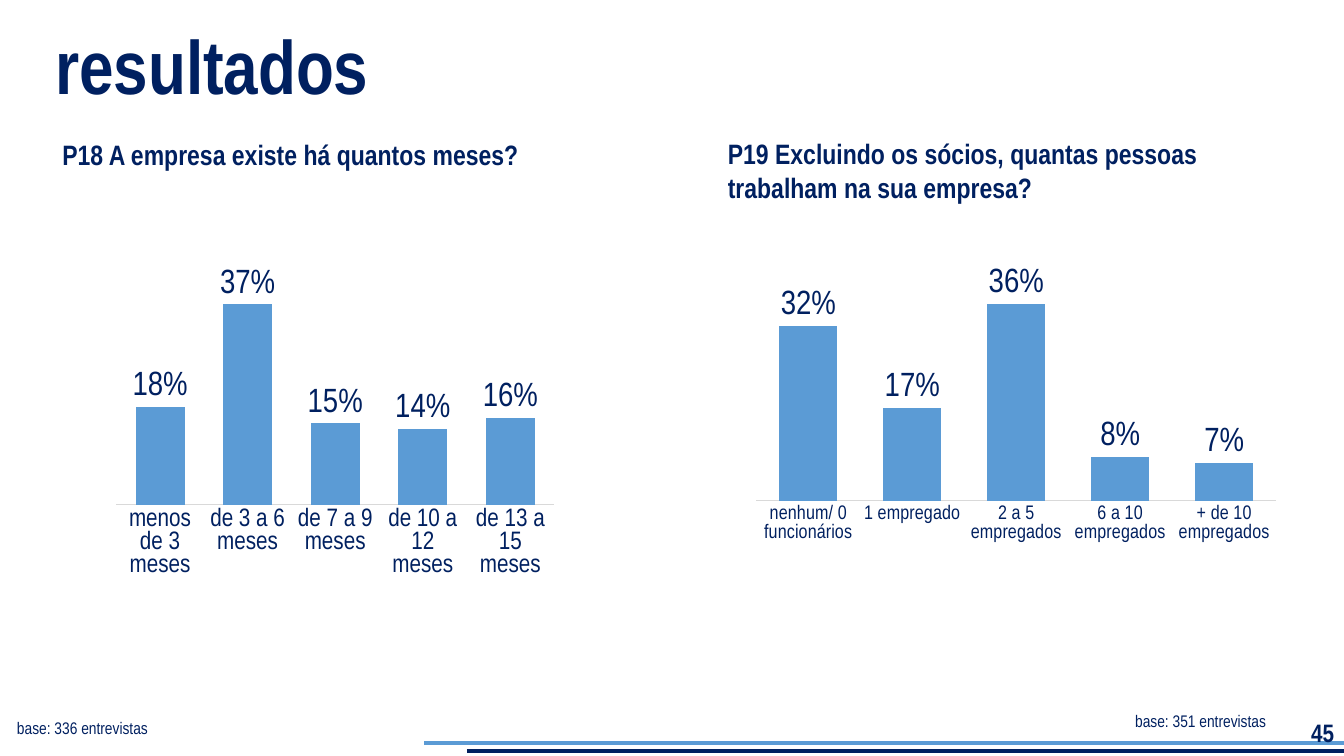
from lxml.etree import SubElement
from pptx import Presentation
from pptx.chart.data import CategoryChartData
from pptx.dml.color import RGBColor
from pptx.enum.chart import XL_CHART_TYPE, XL_LABEL_POSITION, XL_TICK_MARK
from pptx.enum.shapes import MSO_CONNECTOR
from pptx.enum.text import MSO_ANCHOR, PP_ALIGN
from pptx.oxml import parse_xml
from pptx.oxml.ns import nsdecls, qn
from pptx.util import Inches, Pt

NAVY = RGBColor(0x00, 0x20, 0x60)
BLUE = RGBColor(0x5B, 0x9B, 0xD5)
GREY = RGBColor(0xD9, 0xD9, 0xD9)
BLACK = RGBColor(0, 0, 0)
FACE = "Arial Narrow"
PERCENT = "###0%"

# Content: footer rules as (left, y, colour)
FOOTER_RULES = [(4.21, 7.37, BLUE), (4.63, 7.45, NAVY)]

# Texts as (text, box, size, bold, paragraph format, frame format)
BASE_LINE = {"line_spacing": 1.5}
TEXTS = [
    ("45", (10.33, 7.07, 3, 0.4), 18, True,
     {"alignment": PP_ALIGN.RIGHT}, {"vertical_anchor": MSO_ANCHOR.MIDDLE}),
    ("P18 A empresa existe há quantos meses?",
     (0.52, 1.31, 5.59, 0.55), 20, True, {}, {}),
    ("P19 Excluindo os sócios, quantas pessoas trabalham na sua empresa?",
     (7.12, 1.31, 5.92, 0.77), 20, True, {}, {}),
    ("resultados", (0.45, 0.14, 12.6, 1.01), 54, True, {}, {}),
    ("base: 336 entrevistas", (0.07, 6.97, 1.89, 0.4), 12, False, BASE_LINE, {}),
    ("base: 351 entrevistas", (11.16, 6.9, 1.89, 0.4), 12, False, BASE_LINE, {}),
]

# Charts: box, plot area as shares of the box, category size, data
CHARTS = [
    {"box": (1, 2.36, 4.65, 3.75), "plot": (0.033, 0.133, 0.934, 0.573),
     "category_size": 18,
     "data": {"menos de 3 meses": 0.18, "de 3 a 6 meses": 0.37,
              "de 7 a 9 meses": 0.15, "de 10 a 12 meses": 0.14,
              "de 13 a 15 meses": 0.16}},
    {"box": (7.32, 1.5, 5.52, 4.64), "plot": (0.033, 0.28, 0.934, 0.468),
     "category_size": 14,
     "data": {"nenhum/ 0 funcionários": 0.32, "1 empregado": 0.17,
              "2 a 5 empregados": 0.36, "6 a 10 empregados": 0.08,
              "+ de 10 empregados": 0.07}},
]


def apply(target, values):
    for name, value in values.items():
        setattr(target, name, value)


def style_font(font, size, color=NAVY, face=FACE, bold=False):
    apply(font, {"size": Pt(size), "name": face, "bold": bold})
    font.color.rgb = color


def add_rule(slide, left, y, color):
    rule = slide.shapes.add_connector(
        MSO_CONNECTOR.STRAIGHT, Inches(left), Inches(y), Inches(13.33), Inches(y))
    rule.line.color.rgb = color
    rule.line.width = Pt(3)
    SubElement(rule._element.spPr, qn("a:effectLst"))


def add_text(slide, text, box, size, bold, paragraph_format, frame_format):
    frame = slide.shapes.add_textbox(*map(Inches, box)).text_frame
    apply(frame, {"word_wrap": True, **frame_format})
    paragraph = frame.paragraphs[0]
    apply(paragraph, paragraph_format)
    run = paragraph.add_run()
    run.text = text
    style_font(run.font, size, bold=bold)


def set_plot_layout(chart, shares):
    edges = "".join(f'<c:{tag} val="{share}"/>'
                    for tag, share in zip("xywh", shares))
    layout = parse_xml(
        f'<c:layout {nsdecls("c")}><c:manualLayout><c:layoutTarget val="inner"/>'
        f'<c:xMode val="edge"/><c:yMode val="edge"/>{edges}'
        '</c:manualLayout></c:layout>')
    plot_area = chart._chartSpace.chart.plotArea
    for automatic in plot_area.findall(qn("c:layout")):
        plot_area.remove(automatic)
    plot_area.insert(0, layout)


def add_bars(slide, box, plot, category_size, data):
    answers = CategoryChartData(number_format=PERCENT)
    answers.categories = list(data)
    answers.add_series("Series 1", list(data.values()))
    chart = slide.shapes.add_chart(
        XL_CHART_TYPE.COLUMN_CLUSTERED, *map(Inches, box), answers).chart
    apply(chart, {"has_legend": False, "has_title": False})
    style_font(chart.font, 10, BLACK, "Calibri")
    set_plot_layout(chart, plot)

    # Axes
    categories = chart.category_axis
    apply(categories, {"major_tick_mark": XL_TICK_MARK.NONE,
                       "has_major_gridlines": False})
    style_font(categories.tick_labels.font, category_size)
    categories.format.line.color.rgb = GREY
    categories.format.line.width = Pt(0.75)
    apply(chart.value_axis, {"visible": False, "has_major_gridlines": False,
                             "minimum_scale": 0, "maximum_scale": 0.4})

    # Bars and their labels
    bars = chart.plots[0]
    apply(bars, {"gap_width": 79, "overlap": -27, "vary_by_categories": False,
                 "has_data_labels": True})
    fill = bars.series[0].format.fill
    fill.solid()
    fill.fore_color.rgb = BLUE
    apply(bars.data_labels, {"show_value": True, "number_format": PERCENT,
                             "number_format_is_linked": False,
                             "position": XL_LABEL_POSITION.OUTSIDE_END})
    style_font(bars.data_labels.font, 24)


def main():
    deck = Presentation()
    apply(deck, {"slide_width": Inches(13.33), "slide_height": Inches(7.5)})
    slide = deck.slides.add_slide(deck.slide_layouts[6])
    for rule in FOOTER_RULES:
        add_rule(slide, *rule)
    for text in TEXTS:
        add_text(slide, *text)
    for chart in CHARTS:
        add_bars(slide, **chart)
    deck.save("out.pptx")


if __name__ == "__main__":
    main()
